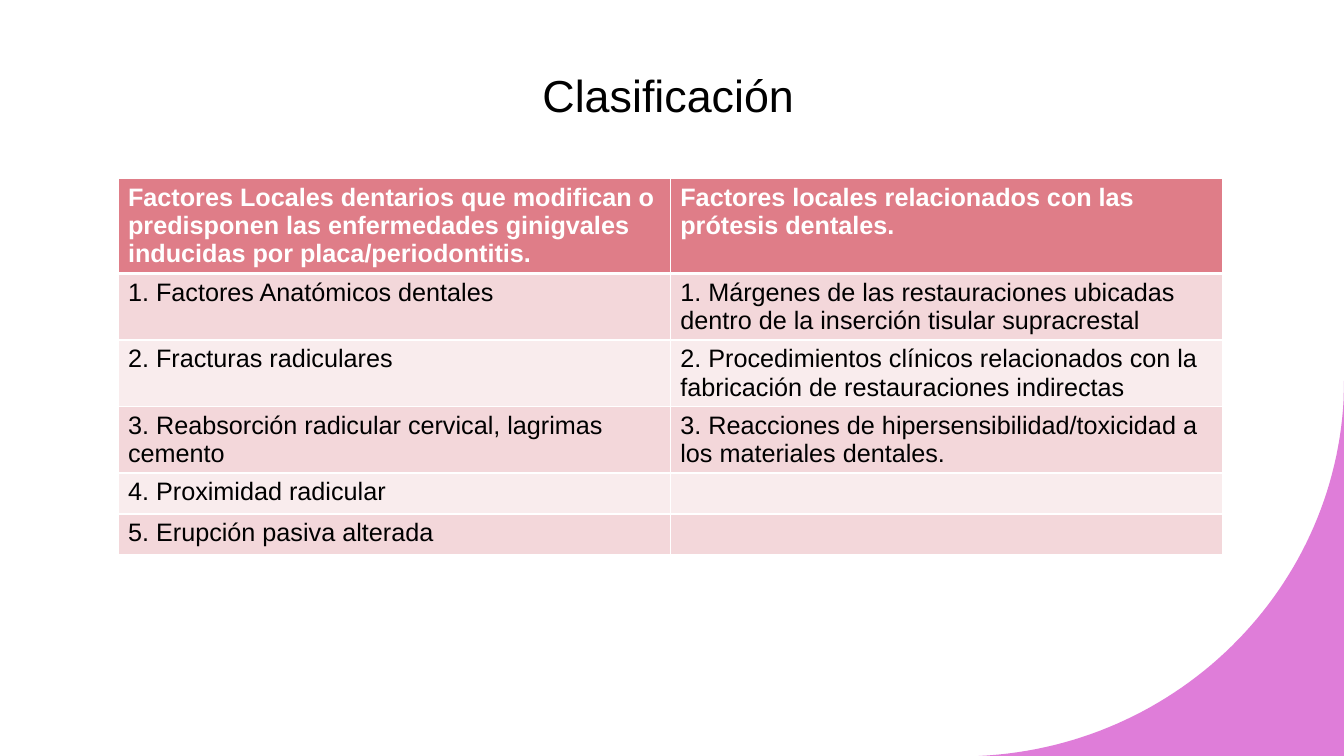
from lxml.etree import SubElement
from pptx import Presentation
from pptx.dml.color import RGBColor
from pptx.enum.text import PP_ALIGN as Align
from pptx.oxml.ns import qn
from pptx.util import Pt

WHITE = RGBColor(0xFF, 0xFF, 0xFF)
BLACK = RGBColor(0x00, 0x00, 0x00)
ORCHID = RGBColor(0xDF, 0x7D, 0xD9)
ROSE = RGBColor(0xDF, 0x7D, 0x88)
BANDS = (RGBColor(0xF3, 0xD7, 0xDA), RGBColor(0xF9, 0xEC, 0xED))

FACTORS = [
    ("Factores Locales dentarios que modifican o predisponen las enfermedades "
     "ginigvales inducidas por placa/periodontitis.",
     "Factores locales relacionados con las prótesis dentales."),
    ("1. Factores Anatómicos dentales",
     "1. Márgenes de las restauraciones ubicadas dentro de la inserción tisular supracrestal"),
    ("2. Fracturas radiculares",
     "2. Procedimientos clínicos relacionados con la fabricación de restauraciones indirectas"),
    ("3. Reabsorción radicular cervical, lagrimas cemento",
     "3. Reacciones de hipersensibilidad/toxicidad a los materiales dentales."),
    ("4. Proximidad radicular", ""),
    ("5. Erupción pasiva alterada", ""),
]


def bezier(points, steps=60):
    """Points along a cubic curve given by its four control points."""
    for step in range(steps + 1):
        t = step / steps
        weights = ((1 - t) ** 3, 3 * t * (1 - t) ** 2, 3 * t * t * (1 - t), t ** 3)
        yield tuple(Pt(sum(w * p[axis] for w, p in zip(weights, points)))
                    for axis in (0, 1))


class SlideBuilder:
    font = "Arial"

    def __init__(self, page):
        self.page = page

    def add_span(self, para, text, size, color=BLACK, bold=False):
        span = para.add_run()
        span.text = text
        span.font.name = self.font
        span.font.size = Pt(size)
        span.font.bold = bold
        span.font.color.rgb = color

    def title(self, text, left, top, width, height):
        box = self.page.shapes.add_textbox(Pt(left), Pt(top), Pt(width), Pt(height))
        box.text_frame.word_wrap = True
        para = box.text_frame.paragraphs[0]
        para.alignment = Align.CENTER
        self.add_span(para, text, 32)

    def curved_corner(self, curve, right, bottom, color):
        start, *rest = bezier(curve)
        builder = self.page.shapes.build_freeform(*start, scale=1.0)
        builder.add_line_segments(rest + [(Pt(right), Pt(curve[-1][1] - 13)),
                                          (Pt(right), Pt(bottom))])
        shape = builder.convert_to_shape()
        shape.shadow.inherit = False
        shape.fill.solid()
        shape.fill.fore_color.rgb = color
        shape.line.fill.background()

    def borders(self, cell, bottom):
        properties = cell._tc.get_or_add_tcPr()
        for side in "LRTB":
            points = bottom if side == "B" else 1
            line = SubElement(properties, qn(f"a:ln{side}"), w=str(Pt(points)))
            fill = SubElement(line, qn("a:solidFill"))
            SubElement(fill, qn("a:srgbClr"), val=str(WHITE))

    def table(self, rows, left, top, column_width, row_height):
        columns = len(rows[0])
        table = self.page.shapes.add_table(
            len(rows), columns, Pt(left), Pt(top),
            Pt(column_width * columns), Pt(row_height * len(rows))).table
        for number, texts in enumerate(rows):
            header = number == 0
            for column, text in enumerate(texts):
                cell = table.cell(number, column)
                self.borders(cell, 3 if header else 1)
                cell.fill.solid()
                cell.fill.fore_color.rgb = ROSE if header else BANDS[(number - 1) % 2]
                if text:
                    self.add_span(cell.text_frame.paragraphs[0], text, 18,
                                  WHITE if header else BLACK, header)


def main():
    deck = Presentation()
    deck.slide_width, deck.slide_height = Pt(960), Pt(540)
    slide = SlideBuilder(deck.slides.add_slide(deck.slide_layouts[6]))

    # Corner decoration
    slide.curved_corner([(699, 540), (840.2, 533.5), (952.6, 422.6), (959.8, 285.1)],
                        960, 540, ORCHID)
    # Classification table; rows grow with their text
    slide.table(FACTORS, 84.3, 127.6, 394.5, 29.2)
    # Heading
    slide.title("Clasificación", 297.4, 44.6, 360, 46)

    deck.save("out.pptx")


if __name__ == "__main__":
    main()
